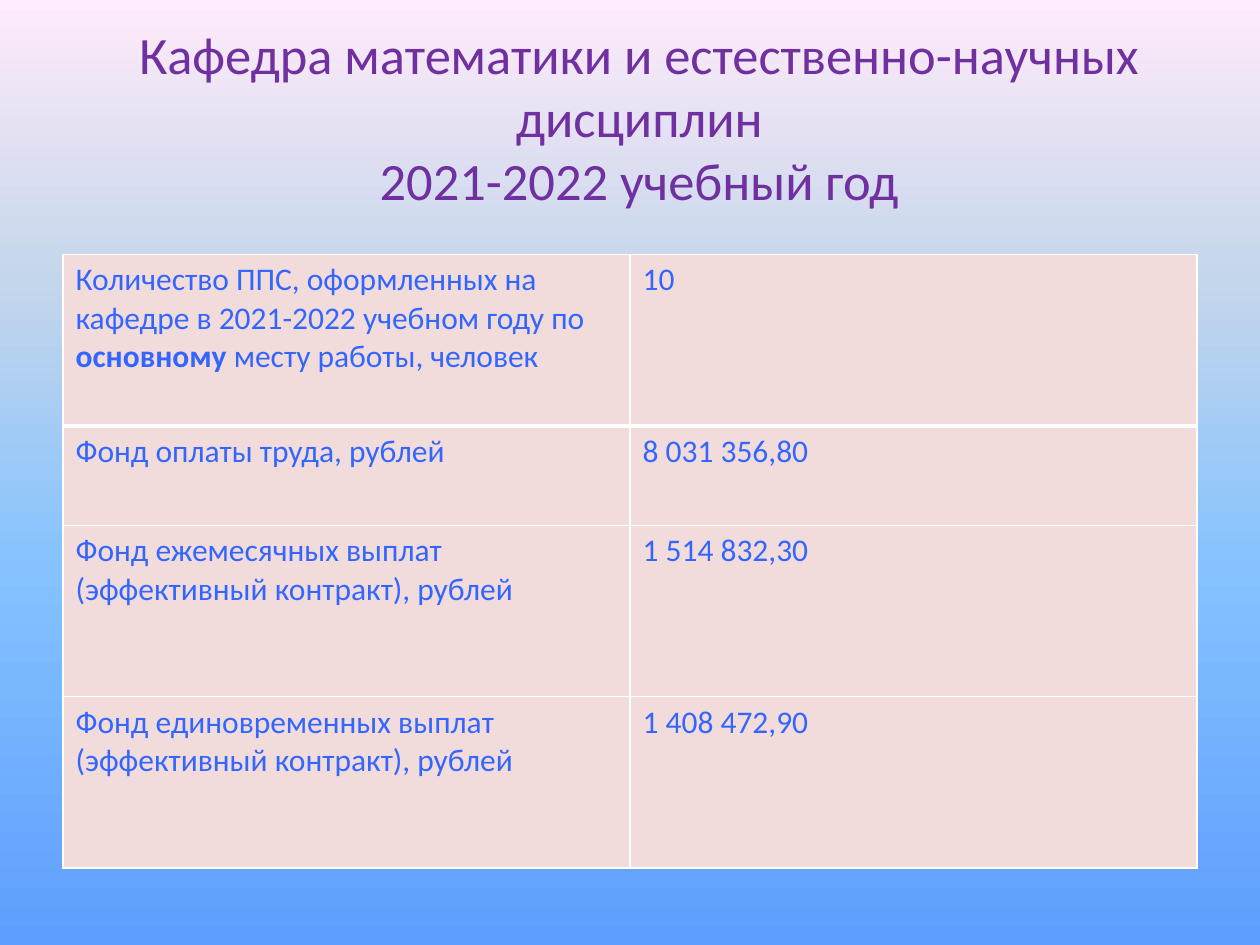
from copy import deepcopy

from lxml import etree
from pptx import Presentation
from pptx.dml.color import RGBColor
from pptx.enum.text import MSO_ANCHOR, MSO_AUTO_SIZE, PP_ALIGN
from pptx.oxml.ns import qn
from pptx.util import Inches, Pt

CENTER = PP_ALIGN.CENTER
MIDDLE = MSO_ANCHOR.MIDDLE
NO_FIT = MSO_AUTO_SIZE.NONE

PURPLE = RGBColor(0x70, 0x30, 0xA0)
BLUE = RGBColor(0x33, 0x66, 0xFF)
ROSE = RGBColor(0xF2, 0xDC, 0xDB)
WHITE = RGBColor(0xFF, 0xFF, 0xFF)
SKY = [
    (0, RGBColor(0x5E, 0x9E, 0xFF)),
    (0.4, RGBColor(0x85, 0xC2, 0xFF)),
    (0.7, RGBColor(0xC4, 0xD6, 0xEB)),
    (1, RGBColor(0xFF, 0xEB, 0xFA)),
]
FONT = "Calibri"

TITLE = [
    "Кафедра математики и естественно-научных дисциплин",
    "2021-2022 учебный год",
]
# Each row: height, label as (text, bold) runs, value
ROWS = [
    (1.36, [("Количество ППС, оформленных на кафедре в 2021-2022 учебном году по ", False),
            ("основному", True),
            (" месту работы, человек", False)], "10"),
    (0.79, [("Фонд оплаты труда, рублей", False)], "8 031 356,80"),
    (1.36, [("Фонд ежемесячных выплат (эффективный контракт), рублей", False)],
     "1 514 832,30"),
    (1.36, [("Фонд единовременных выплат (эффективный контракт), рублей", False)],
     "1 408 472,90"),
]
COL = 4.5


def paint(slide):
    """Fill the background with the upward sky gradient."""
    fill = slide.background.fill
    fill.gradient()
    fill.gradient_angle = 90
    stops = next(slide.element.iter(qn("a:gsLst")))
    while len(stops) < len(SKY):
        stops.append(deepcopy(stops[0]))
    for stop, (pos, color) in zip(fill.gradient_stops, SKY):
        stop.position = pos
        stop.color.rgb = color


def add_run(para, text, size, color, bold=False):
    run = para.add_run()
    run.text = text
    font = run.font
    font.name, font.size, font.bold = FONT, Pt(size), bold
    font.color.rgb = color


def edge(cell, widths):
    """Draw white borders; widths are points for left, right, top, bottom."""
    props = cell._tc.get_or_add_tcPr()
    for i, (side, width) in enumerate(zip("LRTB", widths)):
        line = etree.Element(qn("a:ln" + side), w=str(Pt(width)))
        solid = etree.SubElement(line, qn("a:solidFill"))
        etree.SubElement(solid, qn("a:srgbClr"), val=str(WHITE))
        props.insert(i, line)


def add_title(slide):
    title = slide.shapes.title
    title.left, title.top = Inches(0.5), Inches(0.3)
    title.width, title.height = Inches(9.15), Inches(1.25)
    frame = title.text_frame
    frame.word_wrap = True
    frame.auto_size = NO_FIT
    frame.vertical_anchor = MIDDLE
    para = frame.paragraphs[0]
    para.alignment = CENTER
    for i, text in enumerate(TITLE):
        if i:
            para.add_line_break()
        add_run(para, text, 30, PURPLE)


def add_grid(slide):
    high = sum(row[0] for row in ROWS)
    table = slide.shapes.add_table(
        len(ROWS), 2, Inches(0.5), Inches(2.02), Inches(2 * COL), Inches(high)).table
    for col in table.columns:
        col.width = Inches(COL)
    for r, (tall, label, value) in enumerate(ROWS):
        table.rows[r].height = Inches(tall)
        top = 3 if r == 1 else 1
        base = 3 if r == 0 else 1
        for c, runs in enumerate([label, [(value, False)]]):
            cell = table.cell(r, c)
            cell.fill.solid()
            cell.fill.fore_color.rgb = ROSE
            edge(cell, (1, 1, top, base))
            for text, bold in runs:
                add_run(cell.text_frame.paragraphs[0], text, 18, BLUE, bold)


def main():
    deck = Presentation()
    deck.slide_width, deck.slide_height = Inches(10), Inches(7.5)
    slide = deck.slides.add_slide(deck.slide_layouts[5])
    paint(slide)
    add_title(slide)
    add_grid(slide)
    deck.save("out.pptx")


if __name__ == "__main__":
    main()
